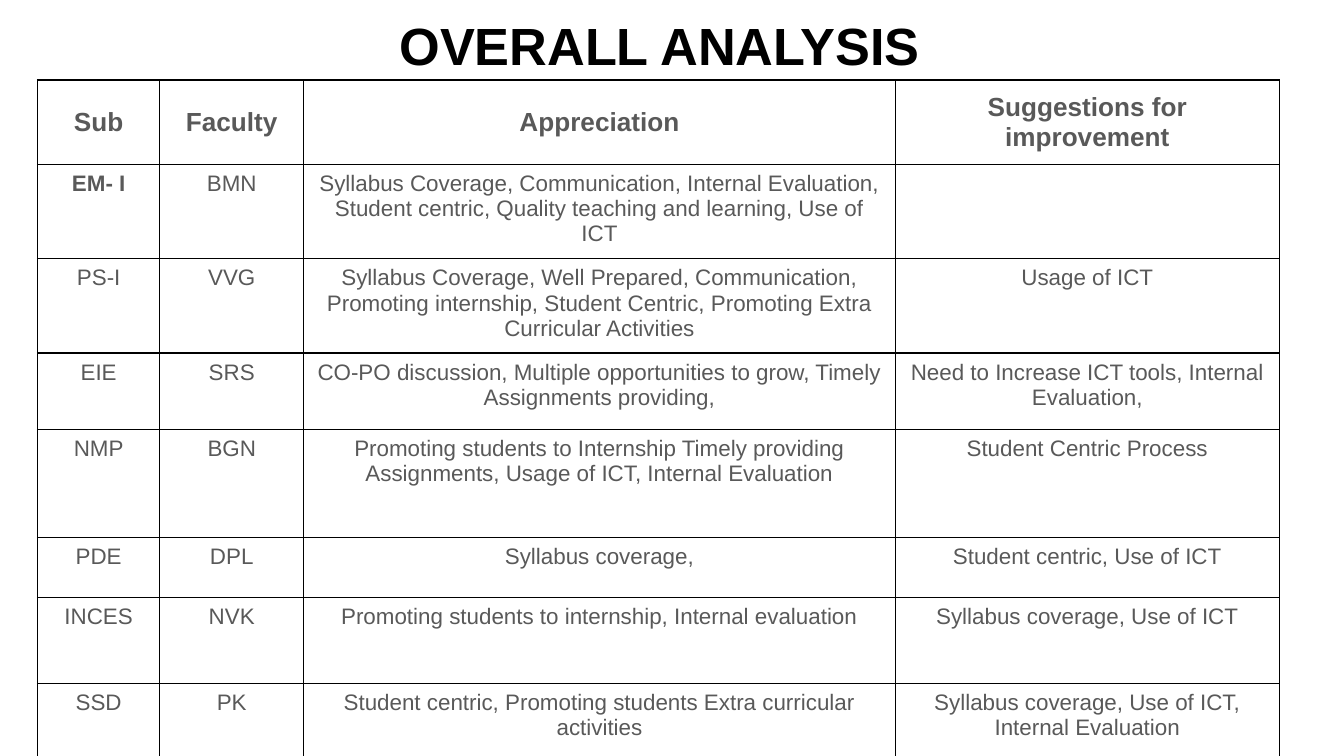
from lxml.etree import SubElement
from pptx import Presentation
from pptx.dml.color import RGBColor
from pptx.enum.text import MSO_ANCHOR, PP_ALIGN
from pptx.oxml import parse_xml
from pptx.oxml.ns import nsdecls
from pptx.util import Cm, Pt

BLACK = RGBColor(0x00, 0x00, 0x00)
GREY = RGBColor(0x59, 0x59, 0x59)

HEADING = "OVERALL ANALYSIS"
ANALYSIS = [
    ("Sub", "Faculty", "Appreciation", "Suggestions for improvement"),
    ("EM- I", "BMN", "Syllabus Coverage, Communication, Internal Evaluation, "
     "Student centric, Quality teaching and learning, Use of ICT", ""),
    ("PS-I", "VVG", "Syllabus Coverage, Well Prepared, Communication, Promoting internship, "
     "Student Centric, Promoting Extra Curricular Activities", "Usage of ICT"),
    ("EIE", "SRS", "CO-PO discussion, Multiple opportunities to grow, Timely Assignments providing,",
     "Need to Increase ICT tools, Internal Evaluation,"),
    ("NMP", "BGN", "Promoting students to Internship Timely providing Assignments, "
     "Usage of ICT, Internal Evaluation", "Student Centric Process"),
    ("PDE", "DPL", "Syllabus coverage,", "Student centric, Use of ICT"),
    ("INCES", "NVK", "Promoting students to internship, Internal evaluation",
     "Syllabus coverage, Use of ICT"),
    ("SSD", "PK", "Student centric, Promoting students Extra curricular activities",
     "Syllabus coverage, Use of ICT, Internal Evaluation"),
]
COLUMN_WIDTHS = [2.31, 2.72, 11.18, 7.26]
ROW_HEIGHTS = [1.6, 1.67, 1.67, 1.45, 2.03, 1.14, 1.63, 1.63]

TITLE_FORMAT = {"name": "Arial", "size": Pt(28), "bold": True}
HEADER_FORMAT = {"name": "Arial", "size": Pt(14), "bold": True}
SUBJECT_FORMAT = {"name": "Arial", "size": Pt(12), "bold": True}
BODY_FORMAT = {"name": "Arial", "size": Pt(12), "bold": False}


def write(frame, wording, font_format, color):
    frame.word_wrap = True
    paragraph = frame.paragraphs[0]
    paragraph.alignment = PP_ALIGN.CENTER
    if not wording:
        return
    run = paragraph.add_run()
    run.text = wording
    for attribute, value in font_format.items():
        setattr(run.font, attribute, value)
    run.font.color.rgb = color


def add_borders(cell):
    properties = cell._tc.get_or_add_tcPr()
    for position, side in enumerate(("lnL", "lnR", "lnT", "lnB")):
        border = parse_xml(
            f'<a:{side} {nsdecls("a")} w="{Pt(0.75)}"><a:solidFill>'
            f'<a:srgbClr val="{BLACK}"/></a:solidFill></a:{side}>')
        properties.insert(position, border)


def cell_format(row, column):
    if row == 0:
        return HEADER_FORMAT
    return SUBJECT_FORMAT if (row, column) == (1, 0) else BODY_FORMAT


def main():
    deck = Presentation()
    deck.slide_width, deck.slide_height = Cm(25.4), Cm(14.28)
    slide = deck.slides.add_slide(deck.slide_layouts[6])

    title = slide.shapes.add_textbox(Cm(0.69), Cm(0), Cm(23.55), Cm(1.4)).text_frame
    for side in ("left", "top", "right", "bottom"):
        setattr(title, f"margin_{side}", Cm(0.25))
    write(title, HEADING, TITLE_FORMAT, BLACK)

    table = slide.shapes.add_table(
        len(ANALYSIS), len(COLUMN_WIDTHS), Cm(0.71), Cm(1.51),
        Cm(sum(COLUMN_WIDTHS)), Cm(sum(ROW_HEIGHTS))).table
    table.first_row = table.horz_banding = False
    for column, width in zip(table.columns, COLUMN_WIDTHS):
        column.width = Cm(width)
    for row, height in zip(table.rows, ROW_HEIGHTS):
        row.height = Cm(height)

    for row, entries in enumerate(ANALYSIS):
        for column, wording in enumerate(entries):
            cell = table.cell(row, column)
            cell.fill.background()
            cell.vertical_anchor = MSO_ANCHOR.TOP if row else MSO_ANCHOR.MIDDLE
            write(cell.text_frame, wording, cell_format(row, column), GREY)
            add_borders(cell)

    deck.save("out.pptx")


if __name__ == "__main__":
    main()
